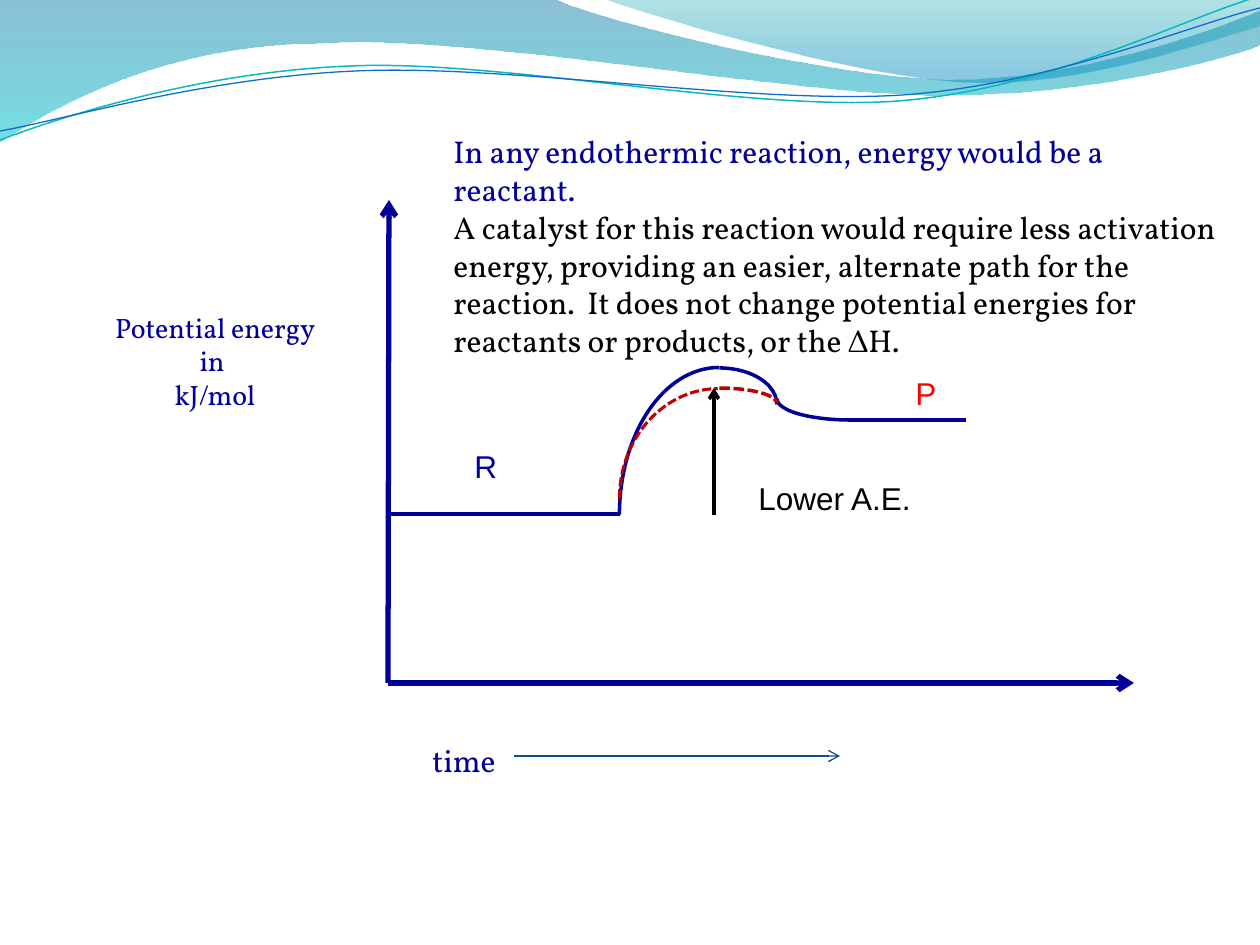
from lxml import etree
from pptx import Presentation
from pptx.dml.color import RGBColor
from pptx.enum.dml import MSO_LINE
from pptx.enum.shapes import MSO_CONNECTOR, MSO_SHAPE
from pptx.enum.text import PP_ALIGN
from pptx.oxml.ns import qn
from pptx.util import Pt

PX = 914400 / 126
STRAIGHT, ARC = MSO_CONNECTOR.STRAIGHT, MSO_SHAPE.ARC
DASH = MSO_LINE.SQUARE_DOT
LEFT, CENTER = PP_ALIGN.LEFT, PP_ALIGN.CENTER
BODY, LABEL = "Vollkorn", "Arial"

COLORS = {
    "navy": "000099", "black": "000000", "red": "FF0000", "crimson": "C00000",
    "time": "095295", "teal line": "0AB8BF", "blue line": "0F6FC6",
    "deep blue": "0074A1", "aqua": "00C6CF", "teal": "00A1A9", "sky": "008BBF",
}

# Waves: start point, then lines (x, y) and curves (two controls, end)
WAVE_BANDS = [
    ([(0, -1), (554, -1), (600, 21, 837, 79, 955, 79),
      (1075, 79, 1207, 33, 1260, 11), (1261, 45),
      (1239, 55, 1096, 96, 940, 95), (784, 95, 481, 35, 324, 43),
      (163, 44, 58, 105, -1, 142)],
     [(0, "deep blue", 45), (1, "aqua", 55)]),
    ([(604, -1), (641, 14, 859, 78, 969, 82),
      (1079, 87, 1211, 40, 1260, 26), (1260, 0)],
     [(0, "teal", 30), (0.8, "sky", 45)]),
]
WAVE_LINES = [
    ([(0, 140), (60, 117, 199, 72, 349, 66), (498, 59, 747, 112, 898, 101),
      (1049, 89, 1182, 19, 1257, -3)], "teal line", 0.85),
    ([(0, 131), (59, 121, 207, 77, 357, 71), (508, 64, 752, 105, 903, 95),
      (1053, 84, 1187, 26, 1260, 8)], "blue line", 0.75),
]

# Lines: from, to, colour, width, arrow
AXES = [
    ((388, 683), (389, 200), "navy", 3, True),
    ((388, 683), (1134, 683), "navy", 3, True),
]
ENERGY_LINES = [
    ((514, 756), (840, 756), "time", 0.75, True),
    ((388, 514), (620, 514), "navy", 2, False),
    ((850, 420), (966, 420), "navy", 2, False),
    ((714, 515), (714, 388), "black", 2, True),
]

# Arcs: box, rotation, colour, width, dashed, angles
REACTION_CURVE = [
    ((572, 415, 294, 199), 270, "navy", 2, False, None),
    ((662, 368, 115, 73), 0, "navy", 2, False, None),
    ((777, 378, 147, 42), 180, "navy", 2, False, None),
]
CATALYST_CURVE = [
    ((609, 399, 220, 199), 270, "crimson", 1.75, True, (162, 215.63)),
    ((662, 388, 115, 31), 0, "crimson", 2, True, None),
]

# Texts: box, font, size, alignment, paragraphs
TEXTS = [
    ((441, 126, 798, 204), BODY, 18, LEFT, [
        ("In any endothermic reaction, energy would be a reactant.", "navy"),
        ("A catalyst for this reaction would require less activation energy, "
         "providing an easier, alternate path for the reaction.  It does not "
         "change potential energies for reactants or products, or the ΔH.",
         "black")]),
    ((94, 304, 242, 115), BODY, 16, CENTER, [
        ("Potential energy in ", "navy"), ("kJ/mol", "navy")]),
    ((420, 735, 305, 50), BODY, 18, LEFT, [("time", "navy")]),
    ((462, 441, 73, 50), LABEL, 18, LEFT, [("R", "navy")]),
    ((903, 368, 53, 53), LABEL, 18, LEFT, [("P", "red")]),
    ((746, 473, 220, 50), LABEL, 18, LEFT, [("Lower A.E.", "black")]),
]


def emu(*lengths):
    return [round(length * PX) for length in lengths]


def rgb(name):
    return RGBColor.from_string(COLORS[name])


def set_line(shape, color, width):
    shape.line.color.rgb = rgb(color)
    shape.line.width = Pt(width)


def add_wave(shapes, path, close):
    """Build the outline through all points, then join triples into curves."""
    points = [tuple(emu(*segment[i:i + 2]))
              for segment in path for i in range(0, len(segment), 2)]
    builder = shapes.build_freeform(*points[0], scale=1.0)
    builder.add_line_segments(points[1:], close=close)
    wave = builder.convert_to_shape()
    wave.shadow.inherit = False

    steps = wave._element.spPr.iter(qn("a:lnTo"))
    steps = list(steps)
    for segment in path[1:]:
        if len(segment) == 2:
            steps.pop(0)
            continue
        first, second, end = steps[:3]
        del steps[:3]
        curve = etree.Element(qn("a:cubicBezTo"))
        first.addprevious(curve)
        for step in (first, second, end):
            curve.append(step[0])
            step.getparent().remove(step)
    return wave


def add_band(shapes, path, stops):
    band = add_wave(shapes, path, True)
    band.line.fill.background()
    band.fill.gradient()
    band.fill.gradient_angle = 270
    for stop, (position, color, _) in zip(band.fill.gradient_stops, stops):
        stop.position = position
        stop.color.rgb = rgb(color)
    tints = band._element.spPr.iter(qn("a:srgbClr"))
    for tint, (_, _, opacity) in zip(tints, stops):
        etree.SubElement(tint, qn("a:alpha"), val=str(opacity * 1000))


def add_line(shapes, start, end, color, width, arrow):
    line = shapes.add_connector(STRAIGHT, *emu(*start, *end))
    set_line(line, color, width)
    if arrow:
        etree.SubElement(line.line._get_or_add_ln(), qn("a:tailEnd"), type="arrow")
    etree.SubElement(line._element.spPr, qn("a:effectLst"))


def add_arc(shapes, box, rotation, color, width, dashed, angles):
    arc = shapes.add_shape(ARC, *emu(*box))
    arc.rotation = rotation
    arc.shadow.inherit = False
    arc.fill.background()
    set_line(arc, color, width)
    if dashed:
        arc.line.dash_style = DASH
    if angles:
        arc.adjustments[0], arc.adjustments[1] = angles


def add_text(shapes, box, font, size, align, paragraphs):
    frame = shapes.add_textbox(*emu(*box)).text_frame
    frame.word_wrap = True
    for index, (words, color) in enumerate(paragraphs):
        paragraph = frame.add_paragraph() if index else frame.paragraphs[0]
        paragraph.alignment = align
        run = paragraph.add_run()
        run.text = words
        run.font.name = font
        run.font.size = Pt(size)
        run.font.color.rgb = rgb(color)


def main():
    deck = Presentation()
    deck.slide_width, deck.slide_height = emu(1260, 945)
    shapes = deck.slides.add_slide(deck.slide_layouts[6]).shapes

    # Wave decoration
    for path, stops in WAVE_BANDS:
        add_band(shapes, path, stops)
    for path, color, width in WAVE_LINES:
        wave = add_wave(shapes, path, False)
        wave.fill.background()
        set_line(wave, color, width)

    # Energy diagram
    for line in AXES + ENERGY_LINES:
        add_line(shapes, *line)
    for arc in REACTION_CURVE + CATALYST_CURVE:
        add_arc(shapes, *arc)

    # Explanation and labels
    for text in TEXTS:
        add_text(shapes, *text)

    deck.save("out.pptx")


if __name__ == "__main__":
    main()
